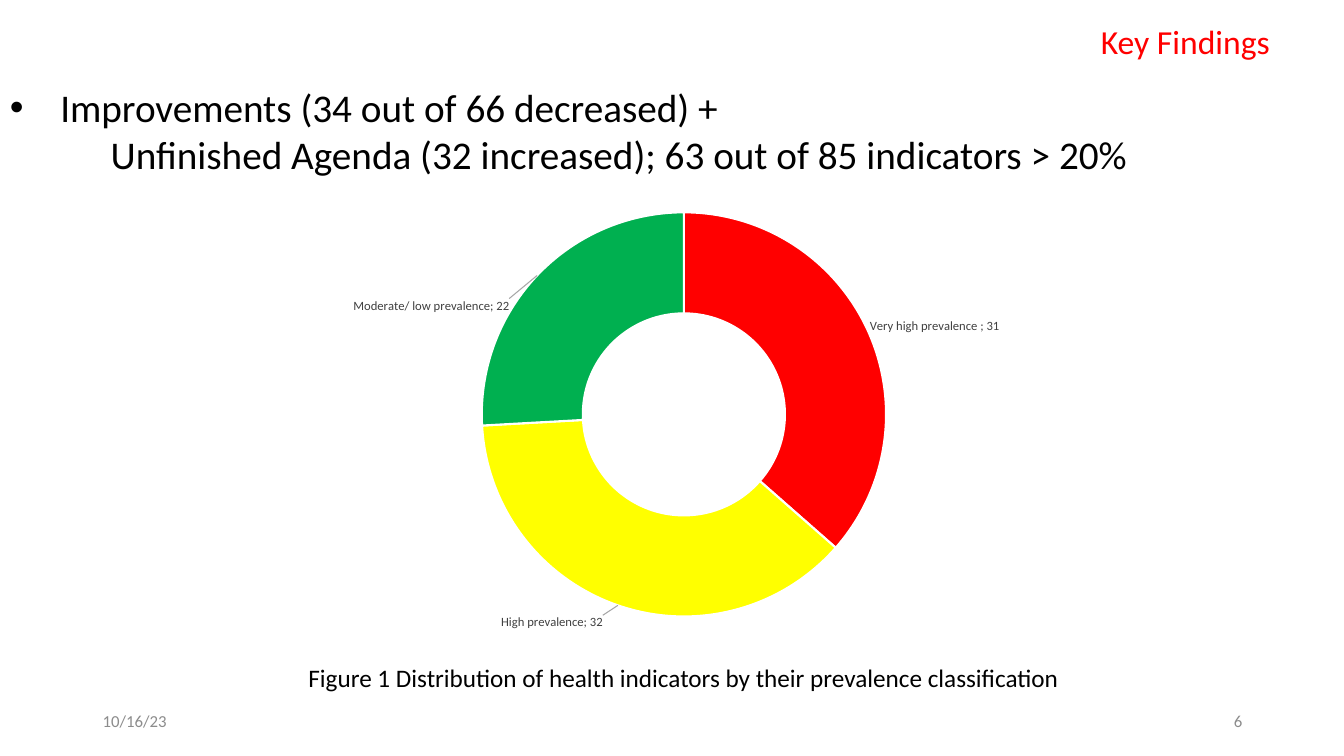
from dataclasses import dataclass

import pptx
import pptx.chart.data
import pptx.dml.color
import pptx.enum.chart
import pptx.enum.text
import pptx.oxml
import pptx.oxml.ns
import pptx.util

Inches = pptx.util.Inches
Pt = pptx.util.Pt
RGBColor = pptx.dml.color.RGBColor
Align = pptx.enum.text.PP_ALIGN
Anchor = pptx.enum.text.MSO_ANCHOR
qn = pptx.oxml.ns.qn

FONT = "Calibri"
BLACK = RGBColor(0x00, 0x00, 0x00)
WHITE = RGBColor(0xFF, 0xFF, 0xFF)
RED = RGBColor(0xFF, 0x00, 0x00)
YELLOW = RGBColor(0xFF, 0xFF, 0x00)
GREEN = RGBColor(0x00, 0xB0, 0x50)
LABEL_GREY = RGBColor(0x40, 0x40, 0x40)
FOOTER_GREY = RGBColor(0x8C, 0x8C, 0x8C)


@dataclass
class Line:
    text: str
    margin: float = 0
    bullet: bool = False


@dataclass
class TextBox:
    left: float
    top: float
    width: float
    height: float
    lines: list[Line]
    size: int
    color: RGBColor = BLACK
    align: Align = Align.LEFT
    anchor: Anchor = Anchor.TOP
    line_spacing: float = 1.0
    space_after: int = 0


@dataclass
class Slice:
    """A ring segment; dx and dy shift its label as fractions of the chart."""
    category: str
    value: int
    color: RGBColor
    dx: float
    dy: float


TEXT_BOXES = [
    TextBox(0, 0.78, 13.33, 3.87, [
        Line("Improvements (34 out of 66 decreased) +", 0.5, True),
        Line("Unfinished Agenda (32 increased); 63 out of 85 indicators > 20%", 1),
    ], 28),
    TextBox(10.82, 0.16, 2.43, 0.5, [Line("Key Findings")], 24, RED),
    TextBox(2.74, 6.5, 8.08, 0.43, [
        Line("Figure 1 Distribution of health indicators by their prevalence classification"),
    ], 18, align=Align.CENTER, line_spacing=1.07, space_after=8),
    TextBox(0.92, 6.95, 3, 0.4, [Line("10/16/23")], 12, FOOTER_GREY,
            anchor=Anchor.MIDDLE),
    TextBox(9.42, 6.95, 3, 0.4, [Line("6")], 12, FOOTER_GREY, Align.RIGHT,
            Anchor.MIDDLE),
]

SLICES = [
    Slice("Very high prevalence ", 31, RED, 0.15, -0.06),
    Slice("High prevalence", 32, YELLOW, -0.11, 0.15),
    Slice("Moderate/ low prevalence", 22, GREEN, -0.19, -0.01),
]
CHART_WIDTH, CHART_HEIGHT, RING_DIAMETER = 7.44, 4.3, 4.01


def parse_chart_xml(xml: str):
    return pptx.oxml.parse_xml(
        xml.replace(">", f' {pptx.oxml.ns.nsdecls("c", "a")}>', 1))


def add_text_box(slide, box: TextBox) -> None:
    sp = slide.shapes.add_textbox(Inches(box.left), Inches(box.top),
                                  Inches(box.width), Inches(box.height))
    tf = sp.text_frame
    tf.word_wrap = True
    tf.vertical_anchor = box.anchor
    for i, line in enumerate(box.lines):
        p = tf.add_paragraph() if i else tf.paragraphs[0]
        p.alignment = box.align
        p.line_spacing = box.line_spacing
        p.space_after = Pt(box.space_after)
        pPr = p._p.get_or_add_pPr()
        pPr.set("marL", str(Inches(line.margin)))
        if line.bullet:
            pPr.set("indent", str(-Inches(line.margin)))
            pPr.append(parse_chart_xml('<a:buFont typeface="Arial"></a:buFont>'))
            pPr.append(parse_chart_xml('<a:buChar char="•"></a:buChar>'))
        r = p.add_run()
        r.text = line.text
        r.font.name = FONT
        r.font.size = Pt(box.size)
        r.font.color.rgb = box.color


def set_font(font, size: int, color: RGBColor) -> None:
    font.name = FONT
    font.size = Pt(size)
    font.color.rgb = color


def set_plot_layout(chart) -> None:
    """Centre the ring in the chart frame."""
    w, h = RING_DIAMETER / CHART_WIDTH, RING_DIAMETER / CHART_HEIGHT
    plot_area = chart._chartSpace.chart.plotArea
    for old in plot_area.findall(qn("c:layout")):
        plot_area.remove(old)
    plot_area.insert(0, parse_chart_xml(
        '<c:layout><c:manualLayout><c:layoutTarget val="inner"/>'
        '<c:xMode val="edge"/><c:yMode val="edge"/>'
        f'<c:x val="{(1 - w) / 2:.3f}"/><c:y val="{(1 - h) / 2:.3f}"/>'
        f'<c:w val="{w:.3f}"/><c:h val="{h:.3f}"/></c:manualLayout></c:layout>'))


def add_labels(series) -> None:
    labels = series.data_labels
    labels.show_value = True
    labels.show_category_name = True
    set_font(labels.font, 9, LABEL_GREY)
    dLbls = labels._element
    for tag in ("c:showLeaderLines", "c:separator"):
        for old in dLbls.findall(qn(tag)):
            dLbls.remove(old)
    dLbls.append(parse_chart_xml("<c:separator>; </c:separator>"))
    dLbls.append(parse_chart_xml('<c:showLeaderLines val="1"></c:showLeaderLines>'))
    dLbls.append(parse_chart_xml(
        '<c:leaderLines><c:spPr><a:ln w="9525"><a:solidFill>'
        '<a:srgbClr val="A6A6A6"/></a:solidFill></a:ln></c:spPr></c:leaderLines>'))
    for i, part in enumerate(SLICES):
        label = series.points[i].data_label
        set_font(label.font, 9, LABEL_GREY)
        dLbl = dLbls.findall(qn("c:dLbl"))[i]
        dLbl.find(qn("c:showCatName")).set("val", "1")
        dLbl.find(qn("c:idx")).addnext(parse_chart_xml(
            f'<c:layout><c:manualLayout><c:x val="{part.dx}"/>'
            f'<c:y val="{part.dy}"/></c:manualLayout></c:layout>'))
        dLbl.append(parse_chart_xml("<c:separator>; </c:separator>"))


def add_prevalence_chart(slide) -> None:
    data = pptx.chart.data.CategoryChartData()
    data.categories = [part.category for part in SLICES]
    data.add_series("Series 1", [part.value for part in SLICES])
    chart = slide.shapes.add_chart(
        pptx.enum.chart.XL_CHART_TYPE.DOUGHNUT, Inches(3.06), Inches(1.96),
        Inches(CHART_WIDTH), Inches(CHART_HEIGHT), data).chart
    chart.has_legend = False
    chart.has_title = False
    set_font(chart.font, 10, BLACK)
    set_plot_layout(chart)
    plot = chart.plots[0]
    plot.vary_by_categories = True
    plot._element.find(qn("c:holeSize")).set("val", "50")
    series = plot.series[0]
    for i, part in enumerate(SLICES):
        fmt = series.points[i].format
        fmt.fill.solid()
        fmt.fill.fore_color.rgb = part.color
        fmt.line.color.rgb = WHITE
        fmt.line.width = Pt(1.5)
    add_labels(series)


def main() -> None:
    prs = pptx.Presentation()
    prs.slide_width, prs.slide_height = Inches(13.33), Inches(7.5)
    slide = prs.slides.add_slide(prs.slide_layouts[6])
    add_prevalence_chart(slide)
    for box in TEXT_BOXES:
        add_text_box(slide, box)
    prs.save("out.pptx")


if __name__ == "__main__":
    main()
